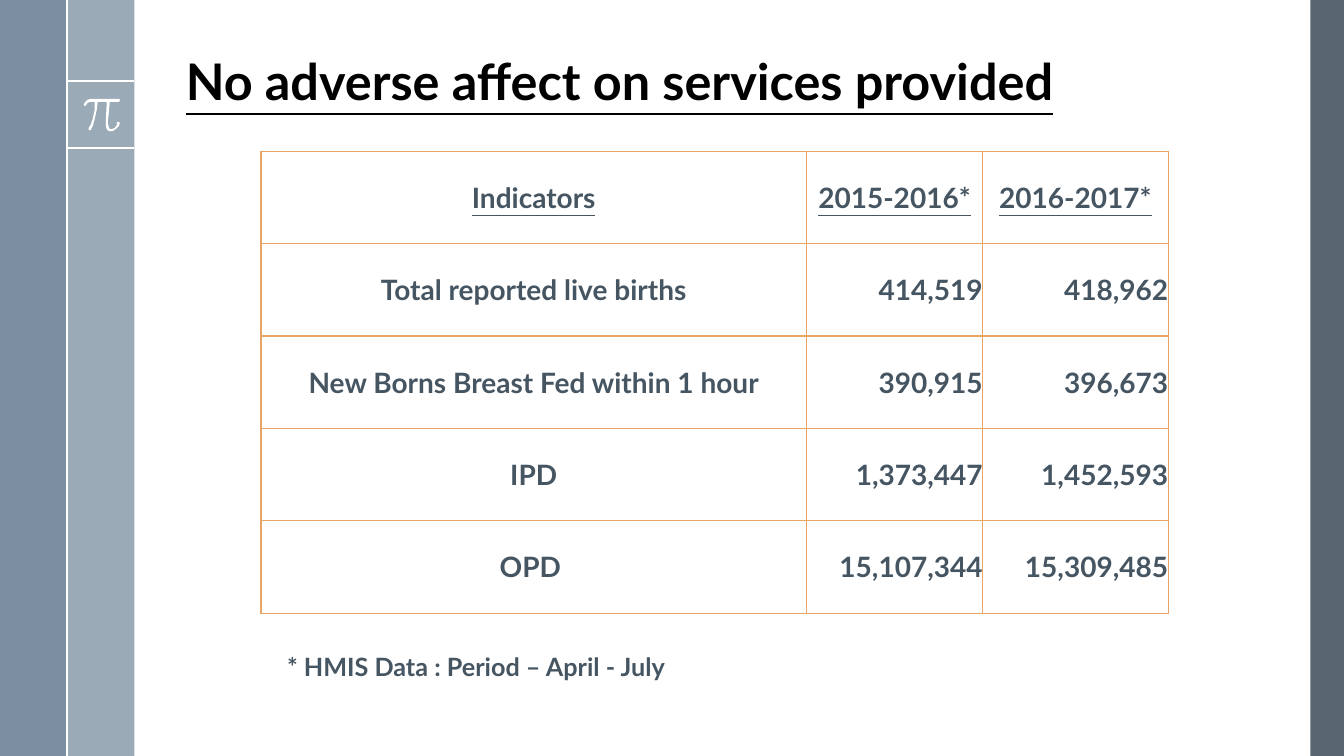
from lxml import etree
from pptx import Presentation
from pptx.dml.color import RGBColor
from pptx.enum.shapes import MSO_CONNECTOR, MSO_SHAPE
from pptx.enum.text import MSO_ANCHOR, PP_ALIGN
from pptx.oxml.ns import qn
from pptx.util import Pt

LEFT, CENTER, RIGHT = PP_ALIGN.LEFT, PP_ALIGN.CENTER, PP_ALIGN.RIGHT
MIDDLE, BOTTOM = MSO_ANCHOR.MIDDLE, MSO_ANCHOR.BOTTOM
RECTANGLE, STRAIGHT = MSO_SHAPE.RECTANGLE, MSO_CONNECTOR.STRAIGHT
TITLE_ONLY = 5

WIDTH, HEIGHT = 960, 540
BAND = 48
SLATE, WHITE, BLACK, ORANGE = "465562", "FFFFFF", "000000", "E8A565"

COLUMN_WIDTHS = [389.5, 126, 132.5]
ROW_HEIGHT = 66
ROWS = [
    ["Indicators", "2015-2016*", "2016-2017*"],
    ["Total reported live births", "414,519", "418,962"],
    ["New Borns Breast Fed within 1 hour", "390,915", "396,673"],
    ["IPD", "1,373,447", "1,452,593"],
    ["OPD ", "15,107,344", "15,309,485"],
]

# Outline of the pi symbol, in hundredths of an inch
PI_OUTLINE = [
    (118, 98), (90, 98), (87, 99), (84.5, 101.5), (83, 104), (83.5, 105),
    (85, 105), (87, 102), (90, 101), (94, 101), (93.5, 109), (92, 118),
    (90.5, 123.5), (88, 127), (87.5, 128), (88, 129), (89.5, 129.3),
    (92.5, 125), (94.5, 118.5), (96, 109), (97, 101), (106, 101), (105, 122),
    (105, 125), (106, 128), (108, 129.5), (110, 130), (112, 130), (115, 128.5),
    (118, 125), (119, 122), (118, 121), (116.5, 121), (115.5, 123.5),
    (113.5, 127), (111, 128), (109, 128), (107.5, 126.5), (107, 122),
    (109, 101), (118, 101), (119, 100), (119, 99),
]


def color(hex_string):
    return RGBColor.from_string(hex_string)


class SlideBuilder:
    font_name = "Lato"

    def __init__(self, slide):
        self.slide = slide

    def fill(self, shape, hex_string, opacity=100):
        shape.shadow.inherit = False
        shape.fill.solid()
        shape.fill.fore_color.rgb = color(hex_string)
        shape.line.fill.background()
        if opacity < 100:
            rgb = shape._element.spPr.find(".//" + qn("a:srgbClr"))
            etree.SubElement(rgb, qn("a:alpha"), val=str(opacity * 1000))

    def bar(self, left, width, hex_string, opacity=100):
        """Add a vertical bar as tall as the slide."""
        shape = self.slide.shapes.add_shape(
            RECTANGLE, Pt(left), Pt(0), Pt(width), Pt(HEIGHT))
        self.fill(shape, hex_string, opacity)

    def line(self, x1, y1, x2, y2):
        connector = self.slide.shapes.add_connector(
            STRAIGHT, Pt(x1), Pt(y1), Pt(x2), Pt(y2))
        connector.line.color.rgb = color(WHITE)
        connector.line.width = Pt(1.5)
        etree.SubElement(connector._element.spPr, qn("a:effectLst"))

    def outline(self, points, hex_string):
        builder = self.slide.shapes.build_freeform(*points[0], scale=Pt(0.72))
        builder.add_line_segments(points[1:], close=True)
        self.fill(builder.convert_to_shape(), hex_string)

    def add_text(self, text_frame, text, size, hex_string=SLATE,
                 alignment=LEFT, underline=False):
        paragraph = text_frame.paragraphs[0]
        paragraph.alignment = alignment
        run = paragraph.add_run()
        run.text = text
        font = run.font
        font.name, font.size = self.font_name, Pt(size)
        font.bold, font.underline = True, underline
        font.color.rgb = color(hex_string)

    def title(self, left, top, width, height, text):
        shape = self.slide.shapes.title
        shape.left, shape.top = Pt(left), Pt(top)
        shape.width, shape.height = Pt(width), Pt(height)
        shape.text_frame.vertical_anchor = BOTTOM
        self.add_text(shape.text_frame, text, 36, BLACK, underline=True)
        shape.text_frame.paragraphs[0].line_spacing = 0.9

    def text_box(self, left, top, width, height, text):
        shape = self.slide.shapes.add_textbox(
            Pt(left), Pt(top), Pt(width), Pt(height))
        shape.text_frame.word_wrap = True
        self.add_text(shape.text_frame, text, 18)

    def border(self, cell, hex_string):
        properties = cell._tc.get_or_add_tcPr()
        for index, side in enumerate(("lnL", "lnR", "lnT", "lnB")):
            line = etree.Element(qn("a:" + side), w=str(Pt(1)))
            solid = etree.SubElement(line, qn("a:solidFill"))
            etree.SubElement(solid, qn("a:srgbClr"), val=hex_string)
            properties.insert(index, line)

    def table(self, left, top, rows, column_widths, row_height):
        table = self.slide.shapes.add_table(
            len(rows), len(column_widths), Pt(left), Pt(top),
            Pt(sum(column_widths)), Pt(row_height * len(rows))).table
        table.first_row = table.horz_banding = False
        for column, width in zip(table.columns, column_widths):
            column.width = Pt(width)
        for row_index, values in enumerate(rows):
            table.rows[row_index].height = Pt(row_height)
            header = row_index == 0
            for column_index, value in enumerate(values):
                cell = table.cell(row_index, column_index)
                cell.margin_left = cell.margin_right = Pt(0)
                cell.margin_top = cell.margin_bottom = Pt(0)
                cell.vertical_anchor = MIDDLE
                cell.fill.background()
                self.border(cell, ORANGE)
                alignment = CENTER if header or column_index == 0 else RIGHT
                self.add_text(cell.text_frame, value, 20, alignment=alignment,
                              underline=header)


def main():
    presentation = Presentation()
    presentation.slide_width, presentation.slide_height = Pt(WIDTH), Pt(HEIGHT)
    slide = presentation.slides.add_slide(
        presentation.slide_layouts[TITLE_ONLY])
    builder = SlideBuilder(slide)

    builder.bar(WIDTH - BAND / 2, BAND / 2, "475562", 90)
    builder.bar(BAND, BAND, "9BAAB7")
    builder.bar(0, BAND, "6A8093", 88)
    for y in (58, 106):
        builder.line(BAND, y, 2 * BAND, y)
    builder.outline(PI_OUTLINE, WHITE)
    builder.line(BAND, 0, BAND, HEIGHT)

    builder.title(125.5, 13, 770, 70.5,
                  "No adverse affect on services provided")
    builder.table(186.5, 108, ROWS, COLUMN_WIDTHS, ROW_HEIGHT)
    builder.text_box(198, 462, 642, 29, "* HMIS Data : Period – April - July")
    presentation.save("out.pptx")


if __name__ == "__main__":
    main()
